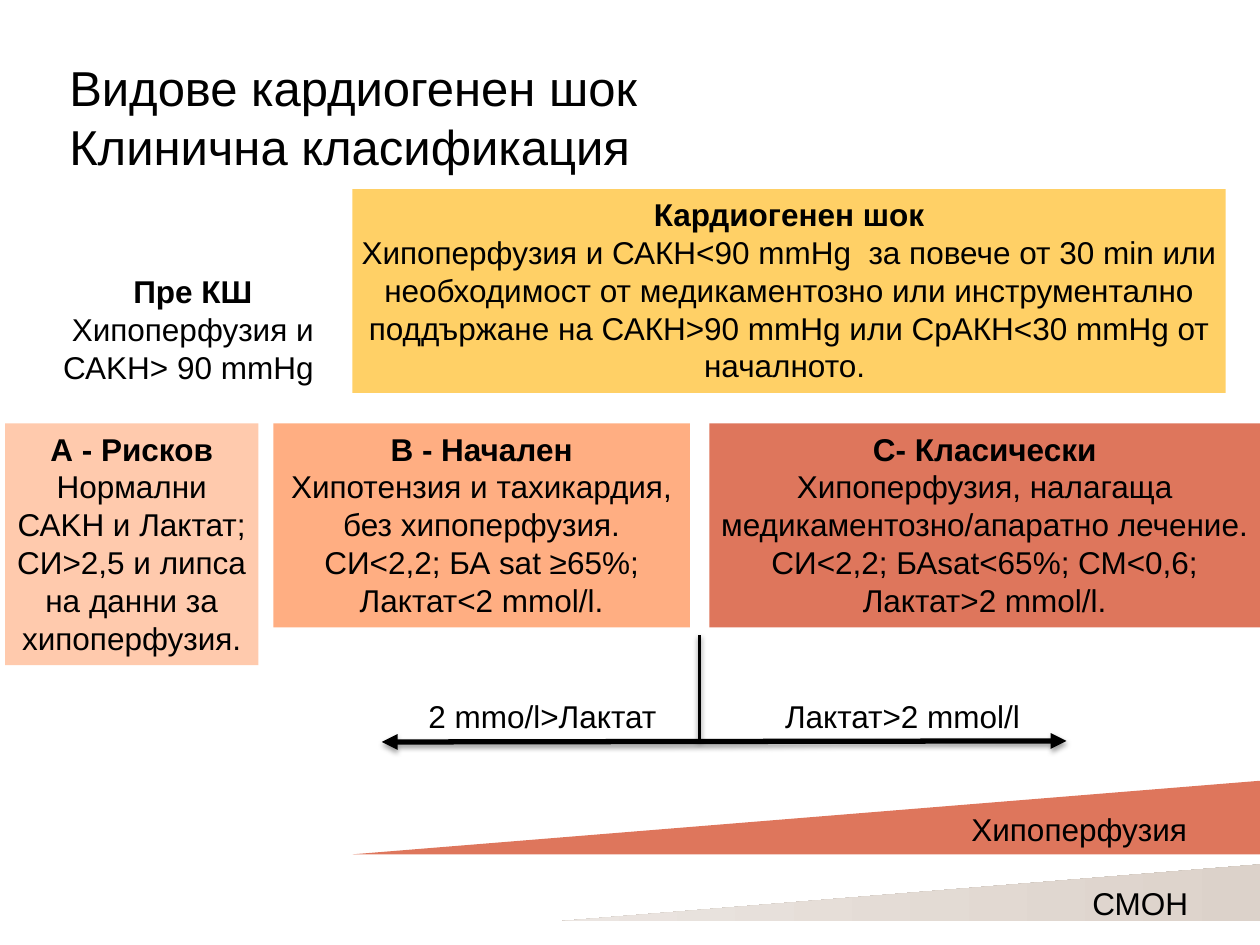
from lxml import etree
from pptx import Presentation
from pptx import util as u
from pptx.dml.color import RGBColor
from pptx.enum import shapes, text
from pptx.oxml import parse_xml
from pptx.oxml.ns import qn

NS = 'xmlns:a="http://schemas.openxmlformats.org/drawingml/2006/main"'
HUES = {"black": "000000", "white": "FFFFFF", "gold": "FFD066",
        "peach": "FFCAAD", "orange": "FFAE82", "red": "DE765C"}
FADE = [(0, "A9A9A9"), (50, "D7CBC1"), (100, "EBE5E1")]


class Deck:
    font = "Arial"
    size = 18
    inset = 3.6

    def __init__(self, wide, high):
        self.file = Presentation()
        self.file.slide_width, self.file.slide_height = u.Pt(wide), u.Pt(high)
        self.slide = self.file.slides.add_slide(self.file.slide_layouts[6])

    def hue(self, name):
        return RGBColor.from_string(HUES[name])

    def fill_text(self, frame, words, size, align, wrap=True, head=False):
        frame.text = words
        frame.word_wrap = wrap
        frame.margin_left = frame.margin_right = u.Pt(self.inset)
        frame.margin_top = frame.margin_bottom = u.Pt(self.inset)
        for row, para in enumerate(frame.paragraphs):
            para.alignment = align
            for run in para.runs:
                run.font.name = self.font
                run.font.size = u.Pt(size)
                run.font.bold = head and row == 0
                run.font.color.rgb = self.hue("black")

    def title(self, x, y, w, h, words):
        box = self.slide.shapes.add_textbox(u.Pt(x), u.Pt(y), u.Pt(w), u.Pt(h))
        self.fill_text(box.text_frame, words, 28, text.PP_ALIGN.LEFT)
        box.text_frame.vertical_anchor = text.MSO_ANCHOR.MIDDLE

    def label(self, x, y, w, words):
        box = self.slide.shapes.add_textbox(u.Pt(x), u.Pt(y), u.Pt(w), u.Pt(28.8))
        self.fill_text(box.text_frame, words, self.size, text.PP_ALIGN.LEFT, False)
        box.text_frame.auto_size = text.MSO_AUTO_SIZE.SHAPE_TO_FIT_TEXT

    def shape(self, kind, x, y, w, h, fill):
        item = self.slide.shapes.add_shape(kind, u.Pt(x), u.Pt(y), u.Pt(w), u.Pt(h))
        item.shadow.inherit = False
        item.line.fill.background()
        item.fill.solid()
        item.fill.fore_color.rgb = self.hue(fill)
        return item

    def panel(self, x, y, w, h, fill, rows):
        item = self.shape(shapes.MSO_SHAPE.RECTANGLE, x, y, w, h, fill)
        frame = item.text_frame
        self.fill_text(frame, "\n".join(rows), self.size, text.PP_ALIGN.CENTER, head=True)
        frame.vertical_anchor = text.MSO_ANCHOR.TOP
        frame.auto_size = text.MSO_AUTO_SIZE.SHAPE_TO_FIT_TEXT

    def wedge(self, x, y, fill, fade=None):
        item = self.shape(shapes.MSO_SHAPE.RIGHT_TRIANGLE, x, y, 1065.6, 86.4, fill)
        item._element.spPr.find(qn("a:xfrm")).set("flipH", "1")
        if fade:
            item.fill.gradient()
            item.fill.gradient_angle = 0
            stops = item._element.spPr.find(qn("a:gradFill")).find(qn("a:gsLst"))
            for old in list(stops):
                stops.remove(old)
            for pos, code in fade:
                stops.append(parse_xml(
                    f'<a:gs {NS} pos="{pos * 1000}"><a:srgbClr val="{code}"/></a:gs>'))

    def line(self, x, y, to_x, to_y, width, heads=False):
        item = self.slide.shapes.add_connector(
            shapes.MSO_CONNECTOR.STRAIGHT, u.Pt(x), u.Pt(y), u.Pt(to_x), u.Pt(to_y))
        item.line.width = u.Pt(width)
        item.line.color.rgb = self.hue("black")
        if heads:
            edge = item._element.spPr.find(qn("a:ln"))
            for end in ("a:headEnd", "a:tailEnd"):
                etree.SubElement(edge, qn(end), type="triangle")
        item._element.spPr.append(parse_xml(
            f'<a:effectLst {NS}><a:outerShdw blurRad="{u.Pt(3)}" dist="{u.Pt(1.6)}" '
            f'dir="5400000" rotWithShape="0"><a:srgbClr val="{HUES["black"]}">'
            '<a:alpha val="38000"/></a:srgbClr></a:outerShdw></a:effectLst>'))


def main():
    deck = Deck(720, 540)
    deck.title(36, 21.6, 648, 90, "Видове кардиогенен шок\vКлинична класификация")
    deck.panel(31, 152, 158.4, 72.7, "white", [
        "Пре КШ", "Хипоперфузия и САKН> 90 mmHg "])
    deck.panel(201.4, 108, 499, 116.6, "gold", [
        "Кардиогенен шок",
        "Хипоперфузия и САКН<90 mmHg  за повече от 30 min или необходимост от "
        "медикаментозно или инструментално поддържане на САКН>90 mmHg или "
        "СрАКН<30 mmHg от началното. "])
    stages = [
        (2.9, 144.7, 138.2, "peach", [
            "А - Рисков", "Нормални САKН и Лактат;",
            "СИ>2,5 и липса на данни за хипоперфузия."]),
        (156.2, 238.1, 116.6, "orange", [
            "В - Начален", "Хипотензия и тахикардия, без хипоперфузия.",
            "СИ<2,2; БА sat ≥65%; Лактат<2 mmol/l."]),
        (405.4, 314.6, 116.6, "red", [
            "С- Класически", "Хипоперфузия, налагаща медикаментозно/апаратно лечение.",
            "СИ<2,2; БАsat<65%; СМ<0,6; Лактат>2 mmol/l."])]
    for x, w, h, fill, rows in stages:
        deck.panel(x, 241.9, w, h, fill, rows)
    deck.line(218.2, 424, 609.4, 423.4, 3, heads=True)
    deck.line(399.6, 363, 399.6, 423.4, 2)
    deck.label(241.2, 394.6, 143.3, "2 mmo/l>Лактат")
    deck.label(445, 394.6, 148.3, "Лактат>2 mmol/l")
    deck.wedge(201.6, 401.8, "red")
    deck.wedge(320.4, 440, "white", FADE)
    deck.label(551.5, 459.4, 131.8, "Хипоперфузия")
    deck.label(620.6, 501.8, 62.6, "СМОН")
    deck.file.save("out.pptx")


if __name__ == "__main__":
    main()
